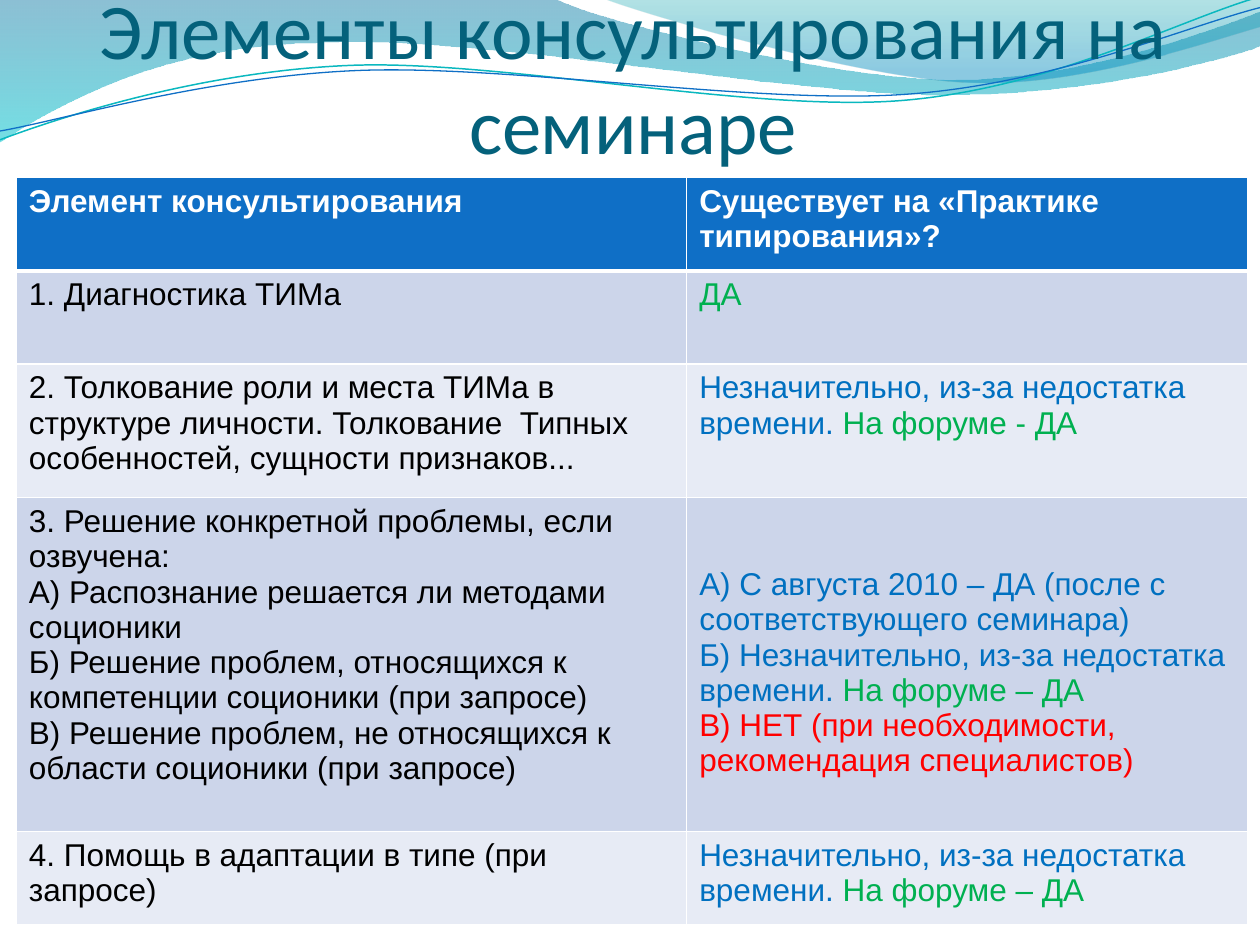
"""Build the slide on elements of consulting at the seminar."""
from math import cos, radians, sin
from lxml.etree import SubElement
from pptx import Presentation
from pptx.dml.color import RGBColor
from pptx.enum.text import MSO_ANCHOR, PP_ALIGN
from pptx.oxml.ns import qn
from pptx.util import Inches, Pt

THEME = {
    "title": "04617B", "head": "0F6FC6", "white": "FFFFFF", "black": "000000",
    "bands": ("CCD5EA", "E7EBF5"), "blue": "0070C0", "green": "00B050",
    "red": "FF0000", "title_font": "Calibri", "font": "Arial",
    "title_size": 45, "size": 18, "rule": 1, "head_rule": 3,
}
TITLE = "Элементы консультирования на семинаре"
HEAD = ("Элемент консультирования", "Существует на «Практике типирования»?")
SHORT = ("blue", "Незначительно, из-за недостатка времени. ")
FORUM = ("green", "На форуме – ДА")
ROWS = [
    (["1. Диагностика ТИМа"], [[("green", "ДА")]]),
    (["2. Толкование роли и места ТИМа в структуре личности. "
      "Толкование  Типных особенностей, сущности признаков..."],
     [[SHORT, ("green", "На форуме - ДА")]]),
    (["3. Решение конкретной проблемы, если озвучена:",
      "А) Распознание решается ли методами соционики",
      "Б) Решение проблем, относящихся к компетенции соционики (при запросе)",
      "В) Решение проблем, не относящихся к области соционики (при запросе)"],
     [[("blue", "А) С августа 2010 – ДА (после с")],
      [("blue", "соответствующего семинара)")],
      [("blue", "Б) " + SHORT[1]), FORUM],
      [("red", "В) НЕТ (при необходимости, рекомендация специалистов)")]]),
    (["4. Помощь в адаптации в типе (при запросе)"], [[SHORT, FORUM]]),
]
COLS = (5.32, 4.45)
HIGH = (0.74, 0.74, 1.06, 2.65, 0.74)
DROPS = {(3, 1): 0.55}
TILT = 357.3

# Each step holds one point for a straight side or three for a curve.
WAVES = [
    ((-0.01, -0.01, 10.02, 1.14),
     [(0, -0.01), (4.4, -0.01), (4.76, 0.17, 6.64, 0.63, 7.58, 0.63),
      (8.53, 0.63, 9.58, 0.26, 10, 0.09), (10.01, 0.36),
      (9.83, 0.44, 8.7, 0.76, 7.46, 0.75), (6.22, 0.75, 3.82, 0.28, 2.57, 0.34),
      (1.29, 0.35, 0.46, 0.83, -0.01, 1.13), (0, -0.01)],
     [(0, "0074A1", 45), (1, "00C6CF", 55)]),
    ((4.79, -0.01, 5.21, 0.7),
     [(4.79, -0.01), (5.09, 0.11, 6.82, 0.62, 7.69, 0.65),
      (8.56, 0.69, 9.61, 0.32, 10, 0.21), (10, 0), (4.79, -0.01)],
     [(0, "00A1A9", 30), (0.8, "008BBF", 45)]),
]
LINES = [
    ((-0.02, 0.22, 10.02, 0.71),
     [(0, 1.11), (0.48, 0.93, 1.58, 0.57, 2.77, 0.52),
      (3.95, 0.47, 5.93, 0.89, 7.13, 0.8), (8.33, 0.71, 9.38, 0.15, 9.98, -0.02)],
     "0AB8BF", 0.85),
    ((-0.02, 0.3, 10.03, 0.58),
     [(0, 1.04), (0.47, 0.96, 1.64, 0.61, 2.83, 0.56),
      (4.03, 0.51, 5.97, 0.83, 7.17, 0.75), (8.36, 0.67, 9.41, 0.21, 10, 0.06)],
     "0F6FC6", 0.75),
]


def tint(name):
    return RGBColor.from_string(THEME.get(name, name))


def place(x, y, box, tilt):
    left, top, wide, high = box
    dx, dy = x - left - wide / 2, y - top - high / 2
    turn = radians(-tilt)
    return (Inches(wide / 2 + dx * cos(turn) - dy * sin(turn)),
            Inches(high / 2 + dx * sin(turn) + dy * cos(turn)))


def draw(slide, box, steps, tilt=0):
    steps = [[place(x, y, box, tilt) for x, y in zip(step[::2], step[1::2])]
             for step in steps]
    pen = slide.shapes.build_freeform(*steps[0][0])
    pen.add_line_segments([step[-1] for step in steps[1:]], close=False)
    shape = pen.convert_to_shape()
    shape.shadow.inherit = False
    shape.left, shape.top, shape.width, shape.height = map(Inches, box)
    shape.rotation = tilt
    track = next(shape.element.iter(qn("a:path")))
    track.clear()
    track.set("w", str(shape.width))
    track.set("h", str(shape.height))
    for index, step in enumerate(steps):
        tag = "a:moveTo" if not index else "a:lnTo" if len(step) == 1 else "a:cubicBezTo"
        node = SubElement(track, qn(tag))
        for x, y in step:
            SubElement(node, qn("a:pt"), x=str(x), y=str(y))
    if not tilt:
        SubElement(track, qn("a:close"))
    return shape


def add_wave(slide, box, steps, stops):
    shape = draw(slide, box, steps)
    shape.line.fill.background()
    shape.fill.gradient()
    shape.fill.gradient_angle = 270
    nodes = shape.element.spPr.iter(qn("a:gs"))
    for stop, node, (spot, color, alpha) in zip(shape.fill.gradient_stops, nodes, stops):
        stop.position = spot
        stop.color.rgb = tint(color)
        SubElement(node[0], qn("a:alpha"), val=str(alpha * 1000))


def add_line(slide, box, steps, color, width):
    shape = draw(slide, box, steps, TILT)
    shape.fill.background()
    shape.line.color.rgb = tint(color)
    shape.line.width = Pt(width)


def add_title(slide):
    frame = slide.shapes.add_textbox(
        Inches(0.14), Inches(0.1), Inches(9.77), Inches(1.25)).text_frame
    frame.word_wrap = True
    frame.vertical_anchor = MSO_ANCHOR.BOTTOM
    frame.margin_left = frame.margin_right = frame.margin_bottom = 0
    para = frame.paragraphs[0]
    para.text = TITLE
    para.alignment = PP_ALIGN.CENTER
    font = para.font
    font.name, font.size = THEME["title_font"], Pt(THEME["title_size"])
    font.color.rgb = tint("title")


def rule_cell(cell, row):
    props = cell._tc.get_or_add_tcPr()
    for index, side in enumerate("LRTB"):
        thick = (row, side) in ((0, "B"), (1, "T"))
        width = Pt(THEME["head_rule" if thick else "rule"])
        line = SubElement(props, qn("a:ln" + side), w=str(width))
        fill = SubElement(line, qn("a:solidFill"))
        SubElement(fill, qn("a:srgbClr"), val=THEME["white"])
        props.insert(index, line)


def fill_cell(table, row, col, paras, fill):
    cell = table.cell(row, col)
    cell.fill.solid()
    cell.fill.fore_color.rgb = tint(fill)
    rule_cell(cell, row)
    if (row, col) in DROPS:
        cell.margin_top = Inches(DROPS[row, col])
    frame = cell.text_frame
    for index, runs in enumerate(paras):
        para = frame.add_paragraph() if index else frame.paragraphs[0]
        for color, text in runs:
            run = para.add_run()
            run.text = text
            font = run.font
            font.name, font.size = THEME["font"], Pt(THEME["size"])
            font.bold = row == 0
            font.color.rgb = tint(color)


def add_grid(slide):
    table = slide.shapes.add_table(
        len(HIGH), len(COLS), Inches(0.13), Inches(1.41),
        Inches(sum(COLS)), Inches(sum(HIGH))).table
    for col, width in zip(table.columns, COLS):
        col.width = Inches(width)
    for row, height in zip(table.rows, HIGH):
        row.height = Inches(height)
    for col, text in enumerate(HEAD):
        fill_cell(table, 0, col, [[("white", text)]], "head")
    for row, (left, right) in enumerate(ROWS, 1):
        band = THEME["bands"][(row - 1) % 2]
        fill_cell(table, row, 0, [[("black", text)] for text in left], band)
        fill_cell(table, row, 1, right, band)


def main():
    deck = Presentation()
    deck.slide_width, deck.slide_height = Inches(10), Inches(7.5)
    slide = deck.slides.add_slide(deck.slide_layouts[6])
    for wave in WAVES:
        add_wave(slide, *wave)
    for line in LINES:
        add_line(slide, *line)
    add_title(slide)
    add_grid(slide)
    deck.save("out.pptx")


if __name__ == "__main__":
    main()
